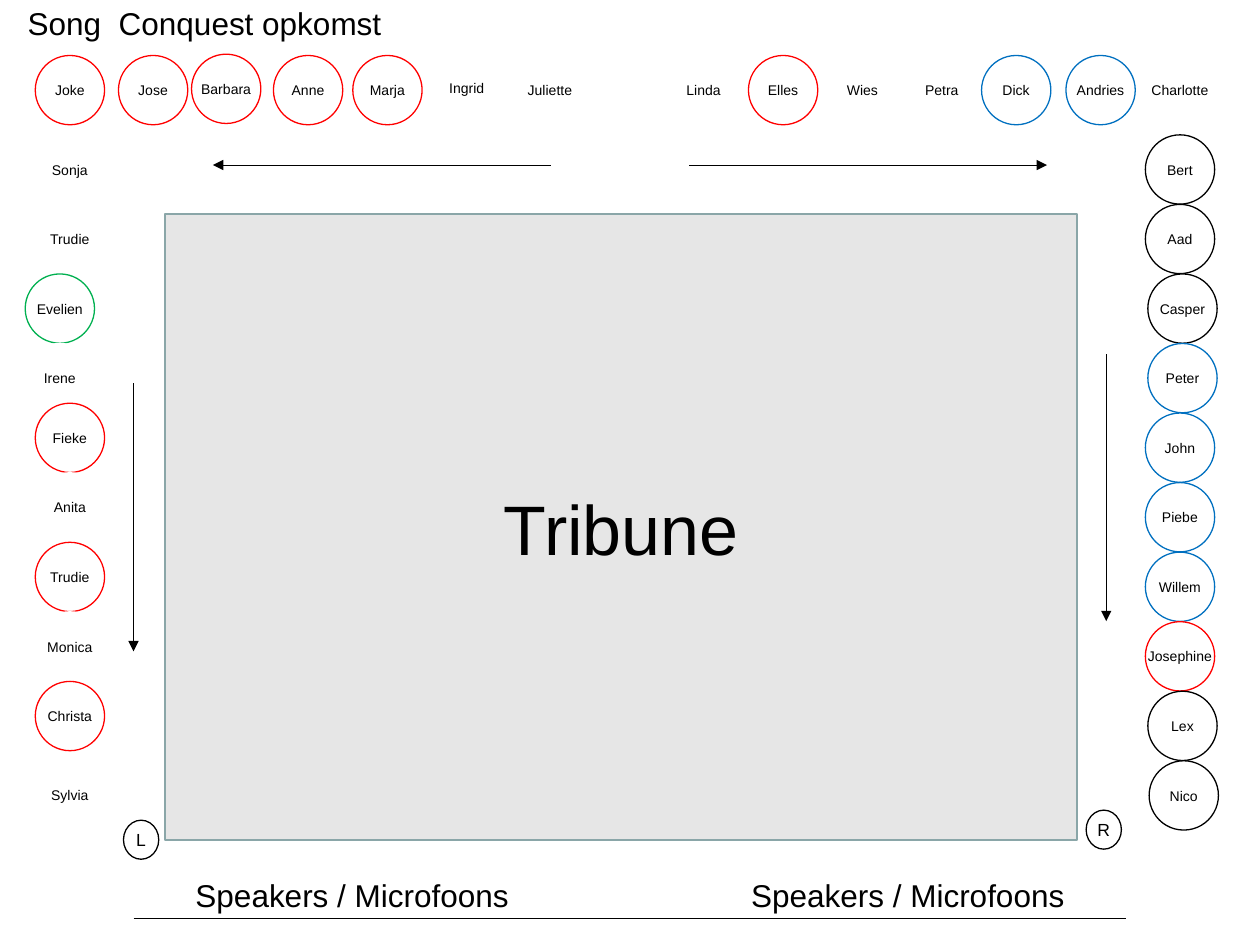
from pptx import Presentation
from pptx.dml.color import RGBColor
from pptx.enum.dml import MSO_PATTERN as Pattern
from pptx.enum.shapes import MSO_CONNECTOR as Link, MSO_SHAPE as Form
from pptx.enum.text import MSO_ANCHOR as Anchor, MSO_AUTO_SIZE as Fit, PP_ALIGN as Align
from pptx.oxml.ns import qn
from pptx.util import Inches, Pt
from lxml.etree import SubElement

SEAT = 0.55
TONES = {"r": "FF0000", "b": "0070C0", "g": "00B050", "p": "00B050", "k": "000000"}
TOP_LEFT = [("Joke", "r", 0, 0.02), ("Jose", "r", 0.66, 0.02), ("Barbara", "r", 1.24, 0.01),
            ("Anne", "r", 1.89, 0.02), ("Marja", "r", 2.52, 0.02), ("Ingrid", "p", 3.15, 0),
            ("Juliette", "p", 3.81, 0.02)]
TOP_RIGHT = [("Linda", "p", 0, 0), ("Elles", "r", 0.63, 0), ("Wies", "p", 1.26, 0),
             ("Petra", "p", 1.89, 0), ("Dick", "b", 2.48, 0), ("Andries", "b", 3.15, 0),
             ("Charlotte", "p", 3.78, 0)]
LEFT_HIGH = [("Sonja", "p", 0.08), ("Trudie", "p", 0.08), ("Evelien", "g", 0), ("Irene", "p", 0)]
LEFT_LOW = [("Fieke", "r", 0), ("Anita", "p", 0), ("Trudie", "r", 0), ("Monica", "p", 0),
            ("Christa", "r", 0)]
RIGHT = [("Bert", "k", 0), ("Aad", "k", 0), ("Casper", "k", 0.02), ("Peter", "b", 0.02),
         ("John", "b", 0), ("Piebe", "b", 0), ("Willem", "b", 0), ("Josephine", "r", 0),
         ("Lex", "k", 0.02), ("Nico", "k", 0.03)]


def tint(code):
    """Turn a hex string into a colour."""
    return RGBColor.from_string(code)


def write(frame, text, size, align=Align.CENTER):
    """Put one formatted paragraph into a text frame."""
    frame.text = text
    para = frame.paragraphs[0]
    para.alignment = align
    para.font.size, para.font.name = Pt(size), "Arial"
    para.font.color.rgb = tint("000000")


def block(slide, form, box, text, size, fill, line, width=0.75, wrap=False):
    """Draw a filled shape with centred text."""
    shape = slide.shapes.add_shape(form, *map(Inches, box))
    shape.shadow.inherit = False
    shape.fill.solid()
    shape.fill.fore_color.rgb = tint(fill)
    shape.line.color.rgb = tint(line)
    shape.line.width = Pt(width)
    frame = shape.text_frame
    write(frame, text, size)
    frame.word_wrap, frame.vertical_anchor = wrap, Anchor.MIDDLE
    return shape


def seat(slide, x, y, name, tone):
    """Draw one singer's circle, with a patterned rim for tone p."""
    shape = block(slide, Form.OVAL, (x, y, SEAT, SEAT), name, 8, "FFFFFF", TONES[tone])
    if tone == "p":
        rim = shape.line.fill
        rim.patterned()
        rim.pattern = Pattern.PERCENT_50
        rim.fore_color.rgb, rim.back_color.rgb = tint(TONES[tone]), tint("FFFFFF")


def row(slide, x, y, seats):
    """Place a row of seats by their offsets from a corner."""
    for name, tone, dx, dy in seats:
        seat(slide, x + dx, y + dy, name, tone)


def column(slide, x, y, seats, pitch=0.552):
    """Stack seats downwards at an equal pitch."""
    for i, (name, tone, dx) in enumerate(seats):
        seat(slide, x + dx, y + i * pitch, name, tone)


def rule(slide, ends, width, head=False):
    """Draw a straight line, with an arrowhead if asked."""
    line = slide.shapes.add_connector(Link.STRAIGHT, *map(Inches, ends))
    line.line.color.rgb = tint("000000")
    line.line.width = Pt(width)
    if head:
        SubElement(line.line._get_or_add_ln(), qn("a:tailEnd"), type="triangle")
    SubElement(line._element.spPr, qn("a:effectLst"))


def title(slide, box, text):
    """Place the slide title."""
    head = slide.shapes.title
    head.left, head.top, head.width, head.height = map(Inches, box)
    frame = head.text_frame
    write(frame, text, 18, Align.LEFT)
    frame.auto_size, frame.vertical_anchor = Fit.NONE, Anchor.TOP


def label(slide, box, text):
    """Place a centred caption."""
    frame = slide.shapes.add_textbox(*map(Inches, box)).text_frame
    frame.word_wrap = True
    write(frame, text, 18)


def stage(slide, x, y, w, h):
    """Draw the stand with its arrows, side marks and front line."""
    block(slide, Form.RECTANGLE, (x, y, w, h), "Tribune", 40, "E6E6E6", "8AA6A8", 1, True)
    aisle, left, right = y - 0.39, x - 0.25, x + w + 0.23
    for ends in ((x + 3.06, aisle, x + 0.38, aisle), (x + 4.16, aisle, x + 7, aisle),
                 (left, y + 1.34, left, y + 3.47), (right, y + 1.11, right, y + 3.23)):
        rule(slide, ends, 0.5, True)
    for text, mx, my in (("L", x - 0.33, y + 4.81), ("R", x + w + 0.07, y + 4.73)):
        block(slide, Form.OVAL, (mx, my, 0.28, 0.31), text, 10, "FFFFFF", "000000")
    for lx in (x - 0.09, x + 4.32):
        label(slide, (lx, y + h + 0.23, 3.15, 0.4), "Speakers / Microfoons")
    rule(slide, (left, y + h + 0.62, x + w + 0.39, y + h + 0.62), 0.75)


def main():
    """Build the seating plan."""
    deck = Presentation()
    deck.slide_width, deck.slide_height = Inches(10), Inches(7.5)
    slide = deck.slides.add_slide(deck.slide_layouts[5])
    title(slide, (0.12, -0.02, 5.59, 0.4), "Song  Conquest opkomst")
    row(slide, 0.28, 0.42, TOP_LEFT)
    row(slide, 5.31, 0.44, TOP_RIGHT)
    column(slide, 0.2, 1.07, LEFT_HIGH)
    column(slide, 0.28, 3.2, LEFT_LOW)
    seat(slide, 0.28, 6.03, "Sylvia", "p")
    column(slide, 9.09, 1.07, RIGHT)
    stage(slide, 1.31, 1.7, 7.24, 4.97)
    deck.save("out.pptx")


if __name__ == "__main__":
    main()
